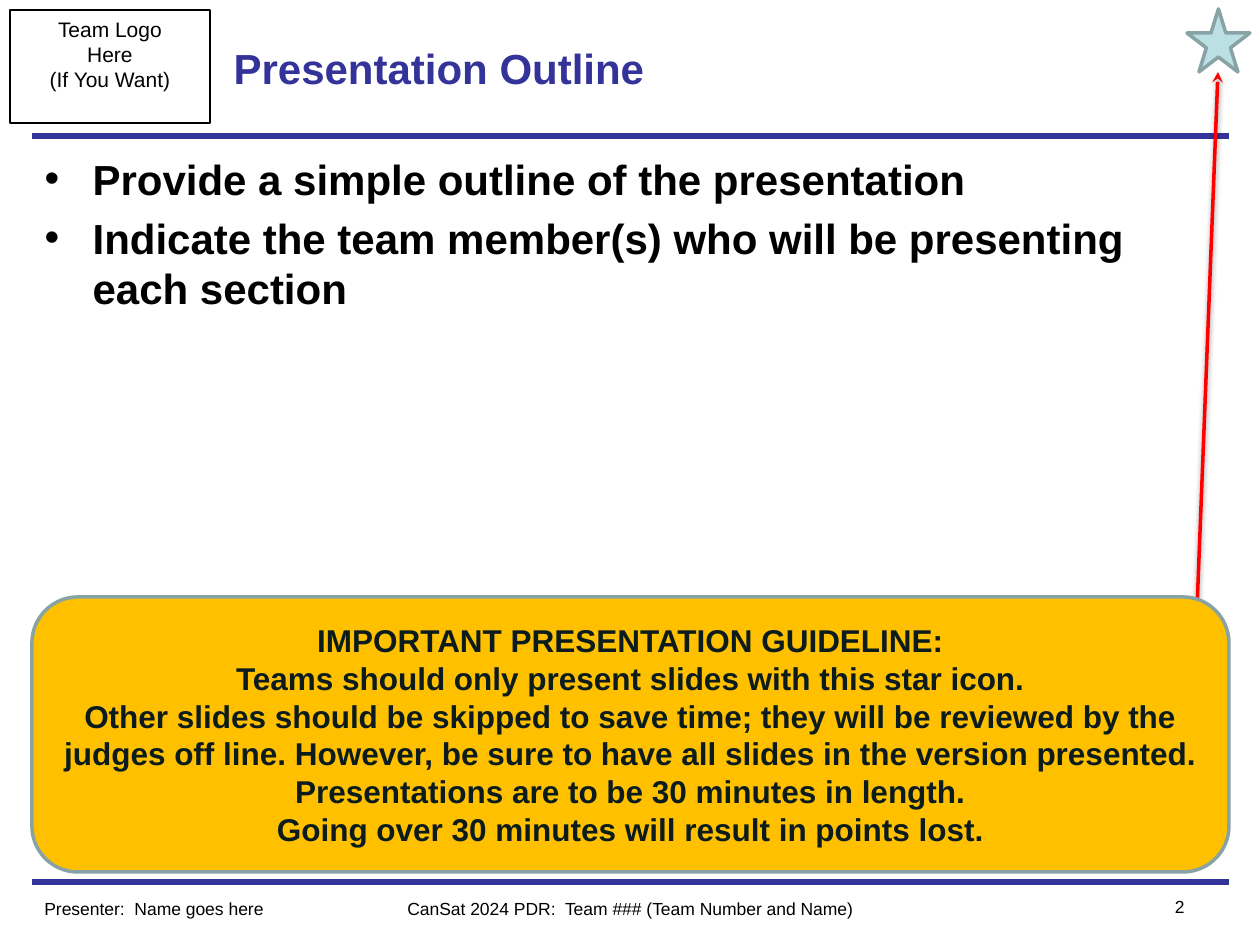
"""Build the presentation outline slide with its star guideline."""
from lxml import etree
from pptx import Presentation
from pptx.dml.color import RGBColor
from pptx.enum.shapes import MSO_CONNECTOR, MSO_SHAPE
from pptx.enum.text import MSO_ANCHOR, MSO_AUTO_SIZE, PP_ALIGN
from pptx.oxml import parse_xml
from pptx.oxml.ns import nsdecls, qn
from pptx.util import Pt

PX = 914400 / 126
COLORS = {
    "navy": "333399",
    "black": "000000",
    "star": "BBE0E3",
    "outline": "88A3A5",
    "gold": "FFC000",
    "ink": "0C1C1D",
    "red": "FF0000",
}


def px(*lengths):
    return [round(length * PX) for length in lengths]


def write(shape, text, size=10, color="black", bold=False, align=PP_ALIGN.LEFT,
          anchor=MSO_ANCHOR.TOP, bullet=None, indent=0, gap=0):
    frame = shape.text_frame
    frame.word_wrap = True
    frame.auto_size = MSO_AUTO_SIZE.NONE
    frame.vertical_anchor = anchor
    frame.text = text
    for index, paragraph in enumerate(frame.paragraphs):
        paragraph.alignment = align
        paragraph.space_before = Pt(gap if index else 0)
        if bullet:
            properties = paragraph._p.get_or_add_pPr()
            properties.set("marL", str(round(indent * PX)))
            properties.set("indent", str(round(-indent * PX)))
            etree.SubElement(properties, qn("a:buChar"), char=bullet)
        paragraph.font.name = "Arial"
        paragraph.font.size = Pt(size)
        paragraph.font.bold = bold
        paragraph.font.color.rgb = RGBColor.from_string(COLORS[color])


presentation = Presentation()
presentation.slide_width, presentation.slide_height = px(1260, 945)
slide = presentation.slides.add_slide(presentation.slide_layouts[1])
shapes = slide.shapes

title, outline = slide.placeholders
title.left, title.top, title.width, title.height = px(221, 10, 819, 116)
write(title, "Presentation Outline", size=24, color="navy", bold=True, anchor=MSO_ANCHOR.MIDDLE)

outline.left, outline.top, outline.width, outline.height = px(32, 147, 1197, 483)
write(outline, "Provide a simple outline of the presentation\n"
      "Indicate the team member(s) who will be presenting each section",
      size=24, bold=True, bullet="•", indent=48, gap=4.8)

for begin, end, color, width in (
    ((32, 882), (1229, 882), "navy", 3),
    ((32, 136), (1229, 136), "navy", 3),
    ((1197, 609), (1218, 72), "red", 2),
):
    line = shapes.add_connector(MSO_CONNECTOR.STRAIGHT, *px(*begin, *end))
    line.line.color.rgb = RGBColor.from_string(COLORS[color])
    line.line.width = Pt(width)
    effects = etree.SubElement(line._element.spPr, qn("a:effectLst"))
    if color == "red":
        etree.SubElement(line.line._get_or_add_ln(), qn("a:tailEnd"), type="stealth")
        effects.append(parse_xml(
            f'<a:outerShdw {nsdecls("a")} blurRad="40000" dist="20000" dir="5400000" rotWithShape="0">'
            '<a:srgbClr val="000000"><a:alpha val="37000"/></a:srgbClr></a:outerShdw>'))

panels = []
for preset, box, fill, edge, width in (
    (MSO_SHAPE.RECTANGLE, (10, 10, 200, 113), None, "black", 0.75),
    (MSO_SHAPE.STAR_5_POINT, (1187, 9, 63, 63), "star", "outline", 2),
    (MSO_SHAPE.ROUNDED_RECTANGLE, (32, 597, 1197, 275), "gold", "outline", 2),
):
    panel = shapes.add_shape(preset, *px(*box))
    panel.shadow.inherit = False
    if fill:
        panel.fill.solid()
        panel.fill.fore_color.rgb = RGBColor.from_string(COLORS[fill])
    else:
        panel.fill.background()
    panel.line.color.rgb = RGBColor.from_string(COLORS[edge])
    panel.line.width = Pt(width)
    panels.append(panel)

team_logo, star, guideline = panels
write(team_logo, "Team Logo\nHere\n(If You Want)", size=12, align=PP_ALIGN.CENTER)
write(guideline, "IMPORTANT PRESENTATION GUIDELINE:\n"
      "Teams should only present slides with this star icon.\n"
      "Other slides should be skipped to save time; they will be reviewed by the judges off line. "
      "However, be sure to have all slides in the version presented.\n"
      "Presentations are to be 30 minutes in length.\n"
      "Going over 30 minutes will result in points lost.",
      size=18, color="ink", bold=True, align=PP_ALIGN.CENTER, anchor=MSO_ANCHOR.MIDDLE)

for text, box, align in (
    ("Presenter:  Name goes here", (32, 892, 315, 34), PP_ALIGN.LEFT),
    ("CanSat 2024 PDR:  Team ### (Team Number and Name)", (378, 892, 504, 34), PP_ALIGN.CENTER),
    ("2", (1102, 890, 95, 34), PP_ALIGN.RIGHT),
):
    write(shapes.add_textbox(*px(*box)), text, align=align)

presentation.save("out.pptx")
